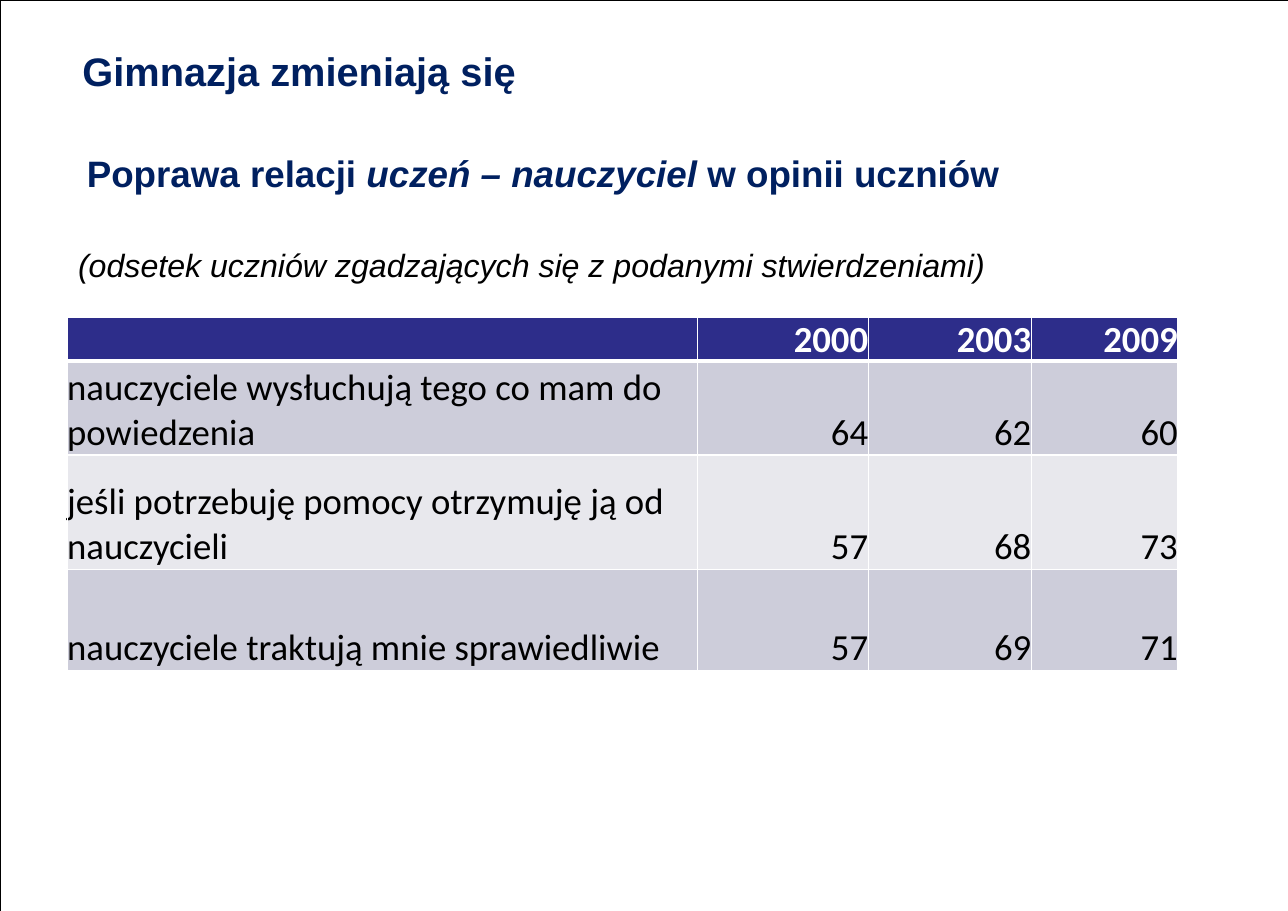
from lxml import etree
from pptx import Presentation
from pptx.dml.color import RGBColor
from pptx.enum import shapes, text
from pptx.oxml import ns
from pptx.util import Inches, Pt

NAVY, BLACK, WHITE = "002060", "000000", "FFFFFF"
HEADER_FILL, BAND_FILLS = "2D2D8A", ("CDCDDA", "E8E8ED")

YEARS = ("", "2000", "2003", "2009")
OPINIONS = (
    ("nauczyciele wysłuchują tego co mam do powiedzenia", "64", "62", "60"),
    ("jeśli potrzebuję pomocy otrzymuję ją od nauczycieli", "57", "68", "73"),
    ("nauczyciele traktują mnie sprawiedliwie", "57", "69", "71"),
)
COLUMN_WIDTHS = (5.72, 1.55, 1.48, 1.33)
ROW_HEIGHTS = (0.4, 0.85, 1.04, 0.92)


def color(value):
    return RGBColor.from_string(value)


def add_run(paragraph, words, size, font, hue, bold=False, italic=False):
    run = paragraph.add_run()
    run.text = words
    run.font.size, run.font.name = Pt(size), font
    run.font.bold, run.font.italic = bold, italic
    run.font.color.rgb = color(hue)


def add_backdrop(slide, box):
    backdrop = slide.shapes.add_shape(
        shapes.MSO_SHAPE.RECTANGLE, *map(Inches, box))
    backdrop.shadow.inherit = False
    backdrop.fill.solid()
    backdrop.fill.fore_color.rgb = color(WHITE)
    backdrop.line.color.rgb = color(BLACK)
    backdrop.line.width = Pt(0.75)


def add_heading(slide, box, pieces, size, hue, bold=False):
    """Pieces are pairs of words and an italic flag."""
    frame = slide.shapes.add_textbox(*map(Inches, box)).text_frame
    frame.word_wrap = True
    frame.auto_size = text.MSO_AUTO_SIZE.SHAPE_TO_FIT_TEXT
    for words, italic in pieces:
        add_run(frame.paragraphs[0], words, size, "Arial", hue, bold, italic)


def add_borders(cell, widths):
    properties = cell._tc.get_or_add_tcPr()
    for side, width in zip("LRTB", widths):
        line = etree.SubElement(properties, ns.qn(f"a:ln{side}"), w=str(Pt(width)))
        fill = etree.SubElement(line, ns.qn("a:solidFill"))
        etree.SubElement(fill, ns.qn("a:srgbClr"), val=WHITE)


def fill_cell(cell, words, row, column):
    header = row == 0
    top, bottom = (3 if row == 1 else 1), (3 if header else 1)
    add_borders(cell, (1, 1, top, bottom))
    cell.fill.solid()
    cell.fill.fore_color.rgb = color(
        HEADER_FILL if header else BAND_FILLS[(row - 1) % 2])
    cell.margin_left = cell.margin_right = cell.margin_top = cell.margin_bottom = 0
    cell.vertical_anchor = text.MSO_ANCHOR.BOTTOM
    paragraph = cell.text_frame.paragraphs[0]
    paragraph.alignment = text.PP_ALIGN.RIGHT if column else text.PP_ALIGN.LEFT
    if words:
        add_run(paragraph, words, 24, "Calibri", WHITE if header else BLACK, header)


def add_opinion_table(slide, box):
    rows = (YEARS, *OPINIONS)
    table = slide.shapes.add_table(
        len(rows), len(YEARS), *map(Inches, box)).table
    for column, width in zip(table.columns, COLUMN_WIDTHS):
        column.width = Inches(width)
    for table_row, height in zip(table.rows, ROW_HEIGHTS):
        table_row.height = Inches(height)
    for r, row in enumerate(rows):
        for c, words in enumerate(row):
            fill_cell(table.cell(r, c), words, r, c)


def main():
    deck = Presentation()
    deck.slide_width, deck.slide_height = Inches(11.69), Inches(8.27)
    slide = deck.slides.add_slide(deck.slide_layouts[6])

    add_backdrop(slide, (0, 0, 12.49, 8.59))

    # Title and subtitle
    add_heading(slide, (0.65, 0.38, 11.45, 0.54),
                [("Gimnazja zmieniają się", False)], 26, NAVY, True)
    add_heading(slide, (0.69, 1.32, 11.64, 0.5),
                [("Poprawa relacji ", False), ("uczeń – nauczyciel", True),
                 (" w opinii uczniów", False)], 24, NAVY, True)

    # Survey results with their caption
    add_opinion_table(slide, (0.61, 2.88, sum(COLUMN_WIDTHS), sum(ROW_HEIGHTS)))
    add_heading(slide, (0.61, 2.18, 11.48, 0.45),
                [("(odsetek uczniów zgadzających się z podanymi stwierdzeniami)",
                  True)], 21, BLACK)

    deck.save("out.pptx")


if __name__ == "__main__":
    main()
